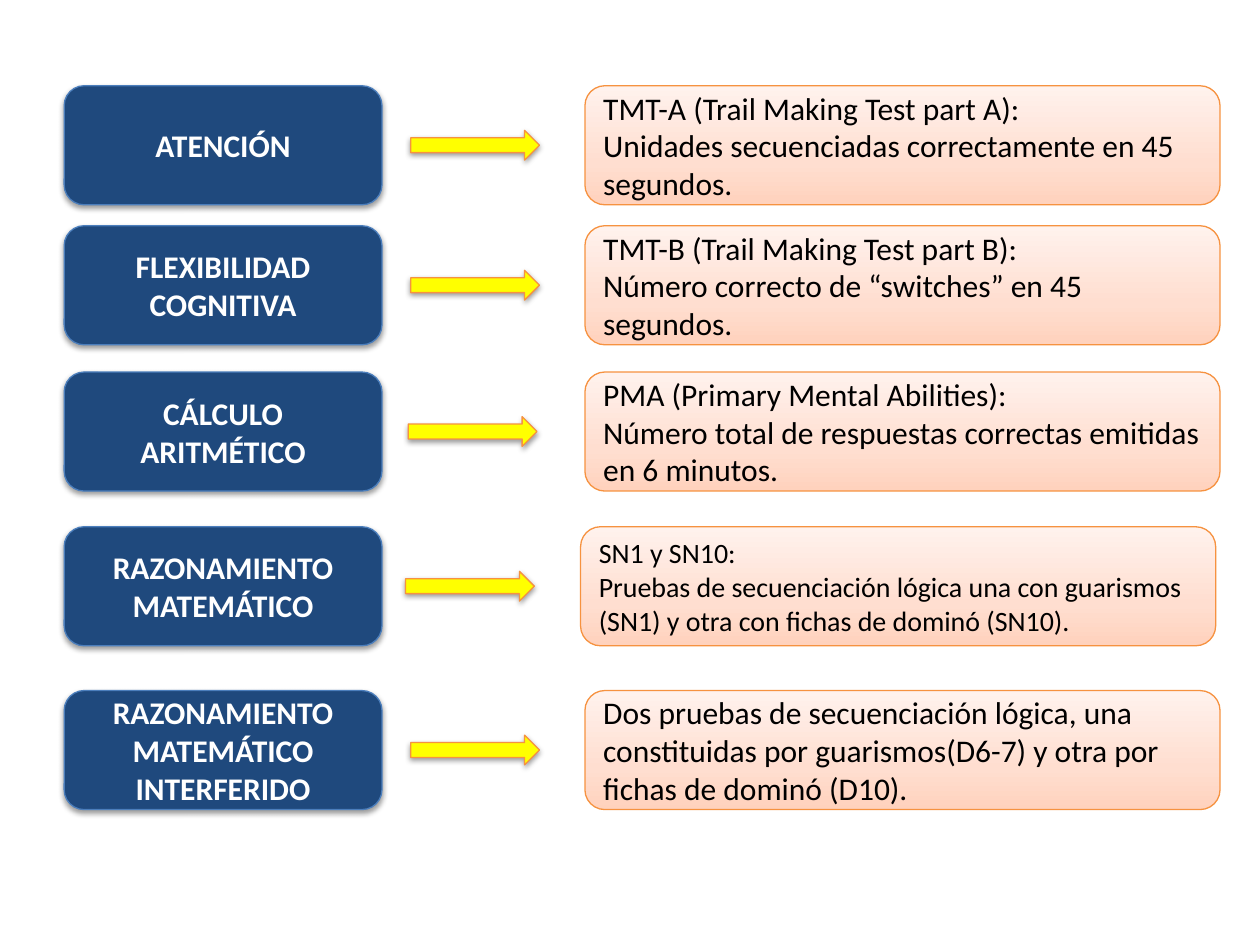
from copy import deepcopy
from lxml import etree
from pptx import Presentation
from pptx.dml.color import RGBColor
from pptx.enum.shapes import MSO_SHAPE
from pptx.enum.text import MSO_ANCHOR, PP_ALIGN
from pptx.oxml.ns import qn
from pptx.util import Pt

ROUND, ARROW = MSO_SHAPE.ROUNDED_RECTANGLE, MSO_SHAPE.RIGHT_ARROW
LEFT, CENTER, MIDDLE = PP_ALIGN.LEFT, PP_ALIGN.CENTER, MSO_ANCHOR.MIDDLE

# Content: top, arrow shift, box shift, text size, skill, test lines
ROWS = [
    (49, 0, 0, 18, "ATENCIÓN",
     ["TMT-A (Trail Making Test part A):",
      "Unidades secuenciadas correctamente en 45 segundos."]),
    (129, 0, 0, 18, "FLEXIBILIDAD COGNITIVA",
     ["TMT-B (Trail Making Test part B):",
      "Número correcto de “switches” en 45 segundos."]),
    (212.6, -1.4, 0, 18, "CÁLCULO ARITMÉTICO",
     ["PMA (Primary Mental Abilities):",
      "Número total de respuestas correctas emitidas en 6 minutos."]),
    (301, -2.9, -2.5, 16, "RAZONAMIENTO MATEMÁTICO",
     ["SN1 y SN10:",
      "Pruebas de secuenciación lógica una con guarismos (SN1) "
      "y otra con fichas de dominó (SN10)."]),
    (394.6, 0, 0, 18, "RAZONAMIENTO MATEMÁTICO INTERFERIDO",
     ["Dos pruebas de secuenciación lógica, una constituidas por "
      "guarismos(D6-7) y otra por fichas de dominó (D10)."]),
]
STOPS = [(0, "FFD2BD"), (0.35, "FFDED0"), (1, "FFF2ED")]

# Columns: left and width; heights
SKILL, POINT, TEST = (36.7, 181.6), (234.7, 73.6), (334.3, 362.9)
BOX_H, ARROW_H = 68, 17


def color(code):
    return RGBColor.from_string(code)


def add_form(kind, left, top, width, height, line):
    form = slide.shapes.add_shape(kind, Pt(left), Pt(top), Pt(width), Pt(height))
    form.shadow.inherit = False
    form.line.color.rgb = color(line)
    form.line.width = Pt(0.75)
    return form


def paint(form, code):
    form.fill.solid()
    form.fill.fore_color.rgb = color(code)


def shade(form):
    """Fill with the stops, the first at the bottom."""
    form.fill.gradient()
    form.fill.gradient_angle = 90
    group = form._element.spPr.find(".//" + qn("a:gsLst"))
    group.append(deepcopy(group[0]))
    for stop, (place, code) in zip(form.fill.gradient_stops, STOPS):
        stop.position = place
        stop.color.rgb = color(code)


def drop_shadow(form):
    effects = form._element.spPr.find(qn("a:effectLst"))
    outer = etree.SubElement(effects, qn("a:outerShdw"), blurRad=str(Pt(3.15)),
                             dist=str(Pt(1.57)), dir="5400000", rotWithShape="0")
    tint = etree.SubElement(outer, qn("a:srgbClr"), val="000000")
    etree.SubElement(tint, qn("a:alpha"), val="38000")


def write(form, lines, align, code, **style):
    frame = form.text_frame
    frame.word_wrap = True
    frame.vertical_anchor = MIDDLE
    frame.text = "\n".join(lines)
    for para in frame.paragraphs:
        para.alignment = align
        font = para.runs[0].font
        font.color.rgb = color(code)
        for key, value in {"name": "Calibri", **style}.items():
            setattr(font, key, value)


deck = Presentation()
deck.slide_width, deck.slide_height = Pt(720), Pt(540)
slide = deck.slides.add_slide(deck.slide_layouts[6])

for top, nudge, shift, size, name, lines in ROWS:
    # Skill
    skill = add_form(ROUND, SKILL[0], top, SKILL[1], BOX_H, "4B7EBC")
    paint(skill, "1F497D")
    drop_shadow(skill)
    write(skill, [name], CENTER, "FFFFFF", size=Pt(18), bold=True)

    # Arrow, centred on the row
    arrow = add_form(ARROW, POINT[0] + nudge, top + (BOX_H - ARROW_H) / 2,
                     POINT[1], ARROW_H, "F69240")
    paint(arrow, "FFFF00")
    drop_shadow(arrow)

    # Test
    test = add_form(ROUND, TEST[0] + shift, top, TEST[1], BOX_H, "F69240")
    shade(test)
    write(test, lines, LEFT, "000000", size=Pt(size))

deck.save("out.pptx")
